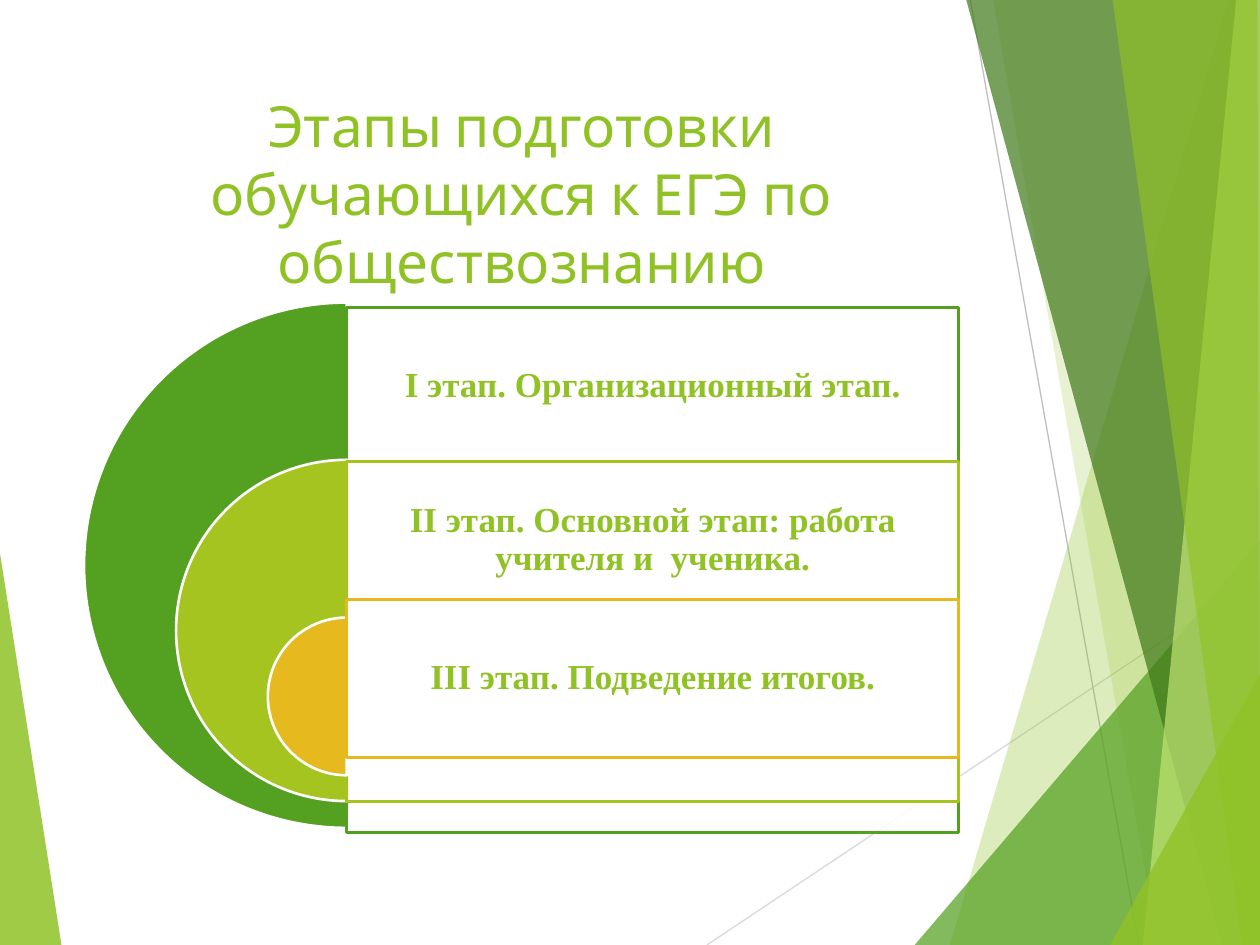
from lxml.etree import SubElement
from pptx import Presentation
from pptx.dml.color import RGBColor as Rgb
from pptx.enum.shapes import MSO_CONNECTOR as Link, MSO_SHAPE as Kind
from pptx.enum.text import MSO_ANCHOR as Anchor, MSO_AUTO_SIZE as Fit, PP_ALIGN as Align
from pptx.oxml.ns import qn
from pptx.util import Cm, Pt

HUES = {
    "lime": "90C226", "green": "54A021", "dark": "3F7819", "pale": "C0E474",
    "olive": "A5C41F", "gold": "E6B91E", "white": "FFFFFF",
    "gray": "BFBFBF", "light": "D9D9D9",
}
WIDE, HIGH = 25.4, 19.05


class Deck:
    """Holds the style and the current slide; lengths are in centimetres."""

    head, body = "Cabin", "Times New Roman"

    def __init__(self):
        self.prs = Presentation()
        self.prs.slide_width, self.prs.slide_height = Cm(WIDE), Cm(HIGH)
        self.slide = self.prs.slides.add_slide(self.prs.slide_layouts[5])
        self.shapes = self.slide.shapes

    def hue(self, name):
        return Rgb.from_string(HUES[name])

    def paint(self, shape, fill, alpha=100, line=None):
        shape.shadow.inherit = False
        shape.fill.solid()
        shape.fill.fore_color.rgb = self.hue(fill)
        if alpha < 100:
            tint = shape._element.spPr.find(qn("a:solidFill"))[0]
            SubElement(tint, qn("a:alpha")).set("val", str(alpha * 1000))
        if line:
            shape.line.color.rgb = self.hue(line)
            shape.line.width = Pt(1.5)
        else:
            shape.line.fill.background()

    def facet(self, points, fill, alpha):
        start, *rest = [(Cm(x), Cm(y)) for x, y in points]
        form = self.shapes.build_freeform(*start)
        form.add_line_segments(rest, close=True)
        self.paint(form.convert_to_shape(), fill, alpha)

    def line(self, x1, y1, x2, y2, color):
        wire = self.shapes.add_connector(
            Link.STRAIGHT, Cm(x1), Cm(y1), Cm(x2), Cm(y2))
        wire.line.color.rgb = self.hue(color)
        wire.line.width = Pt(0.75)
        SubElement(wire._element.spPr, qn("a:effectLst"))

    def half(self, mid, top, size, fill):
        pie = self.shapes.add_shape(
            Kind.PIE, Cm(mid - size / 2), Cm(top), Cm(size), Cm(size))
        pie.adjustments[0], pie.adjustments[1] = 54, 162
        self.paint(pie, fill, line="white")

    def box(self, x, y, w, h, line):
        rect = self.shapes.add_shape(Kind.RECTANGLE, Cm(x), Cm(y), Cm(w), Cm(h))
        self.paint(rect, "white", 90, line)

    def text(self, frame, words, font, size, bold=False):
        frame.word_wrap = True
        frame.auto_size = Fit.NONE
        para = frame.paragraphs[0]
        para.alignment = Align.CENTER
        run = para.add_run()
        run.text = words
        run.font.name, run.font.size, run.font.bold = font, Pt(size), bold
        run.font.color.rgb = self.hue("lime")
        return para

    def label(self, x, y, w, h, words):
        frame = self.shapes.add_textbox(Cm(x), Cm(y), Cm(w), Cm(h)).text_frame
        frame.margin_left = frame.margin_right = Cm(0.2)
        frame.margin_top = frame.margin_bottom = Cm(0.2)
        frame.vertical_anchor = Anchor.MIDDLE
        self.text(frame, words, self.body, 20, True).line_spacing = 0.9

    def title(self, x, y, w, h, words):
        head = self.shapes.title
        head.left, head.top, head.width, head.height = Cm(x), Cm(y), Cm(w), Cm(h)
        head.text_frame.vertical_anchor = Anchor.TOP
        self.text(head.text_frame, words, self.head, 32.4)


def main():
    deck = Deck()

    # Backdrop: left wedge and thin lines
    deck.facet([(0, 11.15), (1.24, HIGH), (0, HIGH)], "lime", 85)
    deck.line(14.25, HIGH, WIDE, 11.61, "light")
    deck.line(19.56, 0, 22.96, HIGH, "gray")

    # Backdrop: facets between a slanted side and the right edge
    # (top x, top y, foot x, right edge x at the top, fill, opacity)
    facets = [
        (24.77, 0, 19.15, WIDE, "lime", 30),
        (20.02, 0, 23.34, WIDE, "lime", 20),
        (WIDE, 10.9, 18.44, WIDE, "green", 72),
        (19.48, 0, 24.64, WIDE, "dark", 70),
        (24.92, 0, 23.04, WIDE, "pale", 70),
        (22.43, 0, 25.04, 25.35, "lime", 65),
        (WIDE, 13.59, 22.38, WIDE, "lime", 80),
    ]
    for top, y, foot, edge, fill, alpha in facets:
        points = [(top, y), (foot, HIGH), (WIDE, HIGH)]
        if edge != top:
            points.append((edge, y))
        deck.facet(points, fill, alpha)

    # Title
    deck.title(1.7, 1.7, 17.63, 3.66,
               "Этапы подготовки обучающихся к ЕГЭ по обществознанию")

    # Stages: half circle, frame and label share one vertical axis
    axis, width, row = 6.99, 12.34, 3.18
    stages = [
        (6.1, 10.59, 6.2, 10.59, "green", "I этап. Организационный этап."),
        (9.27, 6.88, 9.3, 6.86, "olive",
         "II этап. Основной этап: работа учителя и  ученика."),
        (12.45, 3.18, 12.09, row, "gold", "III этап. Подведение итогов."),
    ]
    for arc, size, top, high, color, words in stages:
        deck.half(axis, arc, size, color)
        deck.box(axis, top, width, high, color)
        deck.label(axis, top, width, row, words)

    deck.prs.save("out.pptx")


if __name__ == "__main__":
    main()
